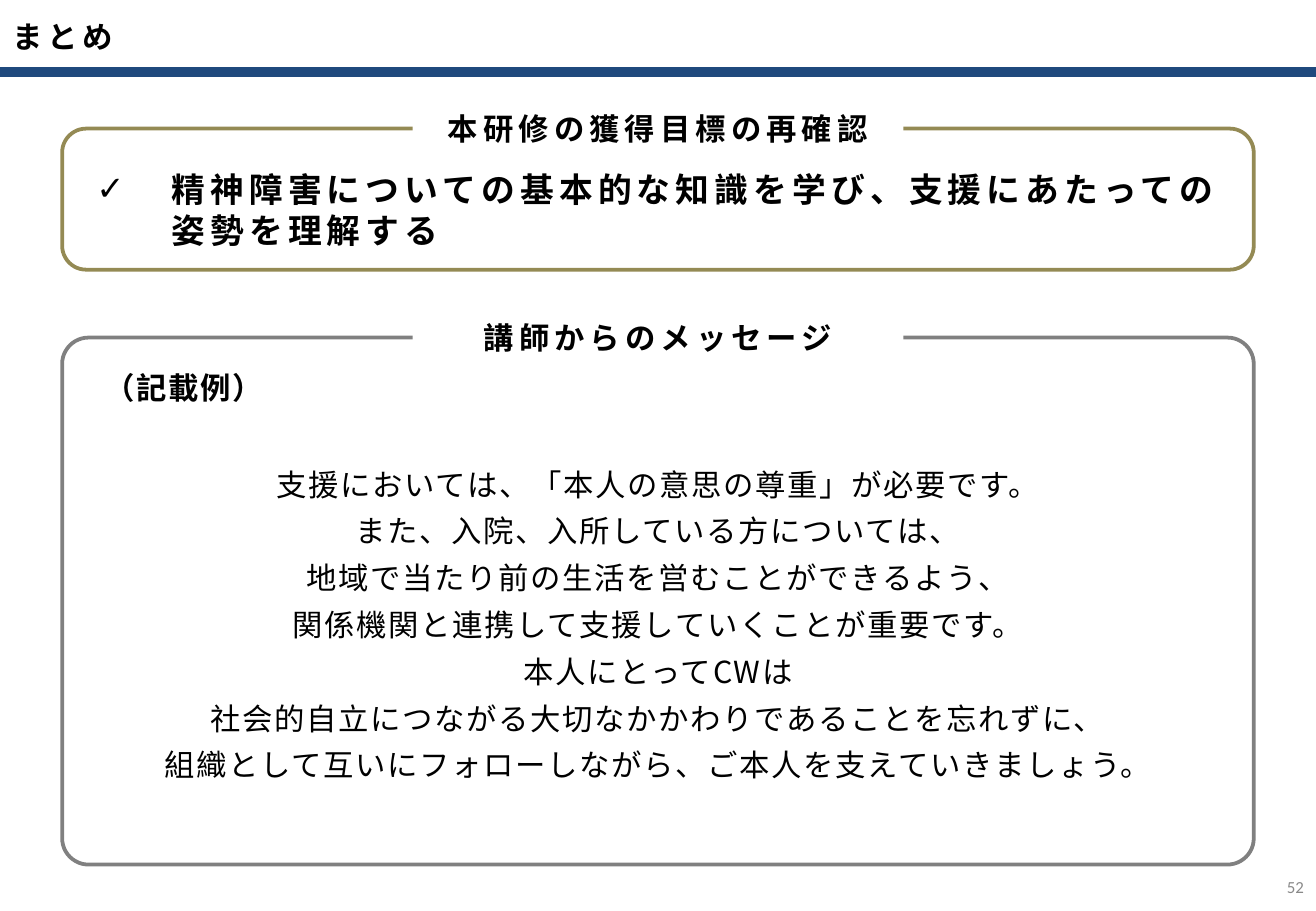
from lxml.etree import SubElement
from pptx import Presentation
from pptx.dml.color import RGBColor
from pptx.enum.shapes import MSO_CONNECTOR, MSO_SHAPE
from pptx.enum.text import MSO_ANCHOR, MSO_AUTO_SIZE, PP_ALIGN
from pptx.oxml.ns import qn
from pptx.util import Cm, Pt

WIDTH, HEIGHT = 27.51, 19.05
FONT = "Noto Sans CJK JP"
COLORS = {"text": "000000", "rule": "1F497D", "goal": "948A54",
          "message": "808080", "page": "898989", "paper": "FFFFFF"}
MESSAGE = [
    "支援においては、「本人の意思の尊重」が必要です。",
    "また、入院、入所している方については、",
    "地域で当たり前の生活を営むことができるよう、",
    "関係機関と連携して支援していくことが重要です。",
    "本人にとってCWは",
    "社会的自立につながる大切なかかわりであることを忘れずに、",
    "組織として互いにフォローしながら、ご本人を支えていきましょう。",
]


def color(name):
    return RGBColor.from_string(COLORS[name])


def place(shape, box):
    shape.left, shape.top, shape.width, shape.height = map(Cm, box)


def write(shape, lines, size=18, bold=True, track=3, align=PP_ALIGN.CENTER,
          before=0, leading=None, ink="text", face=FONT):
    """Fill a shape with paragraphs; track is the letter spacing in points."""
    frame = shape.text_frame
    frame.text = "\n".join(lines)
    frame.word_wrap = True
    frame.auto_size = MSO_AUTO_SIZE.NONE
    frame.vertical_anchor = MSO_ANCHOR.MIDDLE
    for par in frame.paragraphs:
        par.alignment = align
        par.space_before = Pt(before)
        if leading:
            par.line_spacing = Pt(leading)
        font = par.font
        font.size, font.bold, font.name = Pt(size), bold, face
        font.color.rgb = color(ink)
        props = par._p.pPr.find(qn("a:defRPr"))
        props.set("spc", str(track * 100))
        SubElement(props, qn("a:ea")).set("typeface", face)


def add_text(slide, box, lines, **style):
    write(slide.shapes.add_textbox(*map(Cm, box)), lines, **style)


def add_head(slide, box):
    left, top, width, height = box
    place(slide.shapes.title, box)
    write(slide.shapes.title, ["まとめ"], align=PP_ALIGN.LEFT)
    base = Cm(top + height)
    rule = slide.shapes.add_connector(
        MSO_CONNECTOR.STRAIGHT, Cm(left), base, Cm(left + width), base)
    rule.line.color.rgb = color("rule")
    rule.line.width = Pt(6)
    SubElement(rule._element.spPr, qn("a:effectLst"))


def add_panel(slide, box, label, ink, bend):
    """Draw a rounded outline with its label set into the top edge."""
    left, top, width, height = box
    edge = slide.shapes.add_shape(MSO_SHAPE.ROUNDED_RECTANGLE, *map(Cm, box))
    edge.shadow.inherit = False
    edge.adjustments[0] = bend
    edge.fill.background()
    edge.line.color.rgb = color(ink)
    edge.line.width = Pt(2.25)

    wide, high = 10.26, 1.02
    tag = slide.shapes.add_shape(
        MSO_SHAPE.RECTANGLE, Cm(left + (width - wide) / 2),
        Cm(top - high / 2), Cm(wide), Cm(high))
    tag.shadow.inherit = False
    tag.fill.solid()
    tag.fill.fore_color.rgb = color("paper")
    tag.line.fill.background()
    write(tag, [label])


def add_goal(slide, box):
    left, top, width, height = box
    add_panel(slide, box, "本研修の獲得目標の再確認", "goal", 0.17)
    body = slide.placeholders[1]
    place(body, (left + 0.46, top + 0.89, width - 0.91, 1.6))
    write(body, ["精神障害についての基本的な知識を学び、支援にあたっての姿勢を理解する"],
          size=20, align=PP_ALIGN.LEFT, leading=24)
    props = body.text_frame.paragraphs[0]._p.pPr
    props.set("marL", str(Cm(1.57)))
    props.set("indent", str(-Cm(1.57)))
    bullet = props.makeelement(qn("a:buChar"), {"char": "✓"})
    props.find(qn("a:defRPr")).addprevious(bullet)


def add_message(slide, box):
    left, top, width, height = box
    add_panel(slide, box, "講師からのメッセージ", "message", 0.05)
    add_text(slide, (left + 0.53, top + 0.53, 4.01, 1.02), ["（記載例）"], track=1)
    add_text(slide, (left + 0.4, top + 2.21, width - 0.8, 7.57), MESSAGE,
             bold=False, track=1, before=6, leading=21.7)


def main():
    deck = Presentation()
    deck.slide_width, deck.slide_height = Cm(WIDTH), Cm(HEIGHT)
    slide = deck.slides.add_slide(deck.slide_layouts[1])
    side = 1.3
    add_head(slide, (0, 0, WIDTH, 1.5))
    add_goal(slide, (side, 2.69, WIDTH - 2 * side, 2.95))
    add_message(slide, (side, 7.06, WIDTH - 2 * side, 11.02))
    add_text(slide, (WIDTH - 1.04, 18.03, 1.04, 1.02), ["52"], size=10,
             bold=False, track=0, align=PP_ALIGN.RIGHT, ink="page",
             face="Calibri")
    deck.save("out.pptx")


if __name__ == "__main__":
    main()
